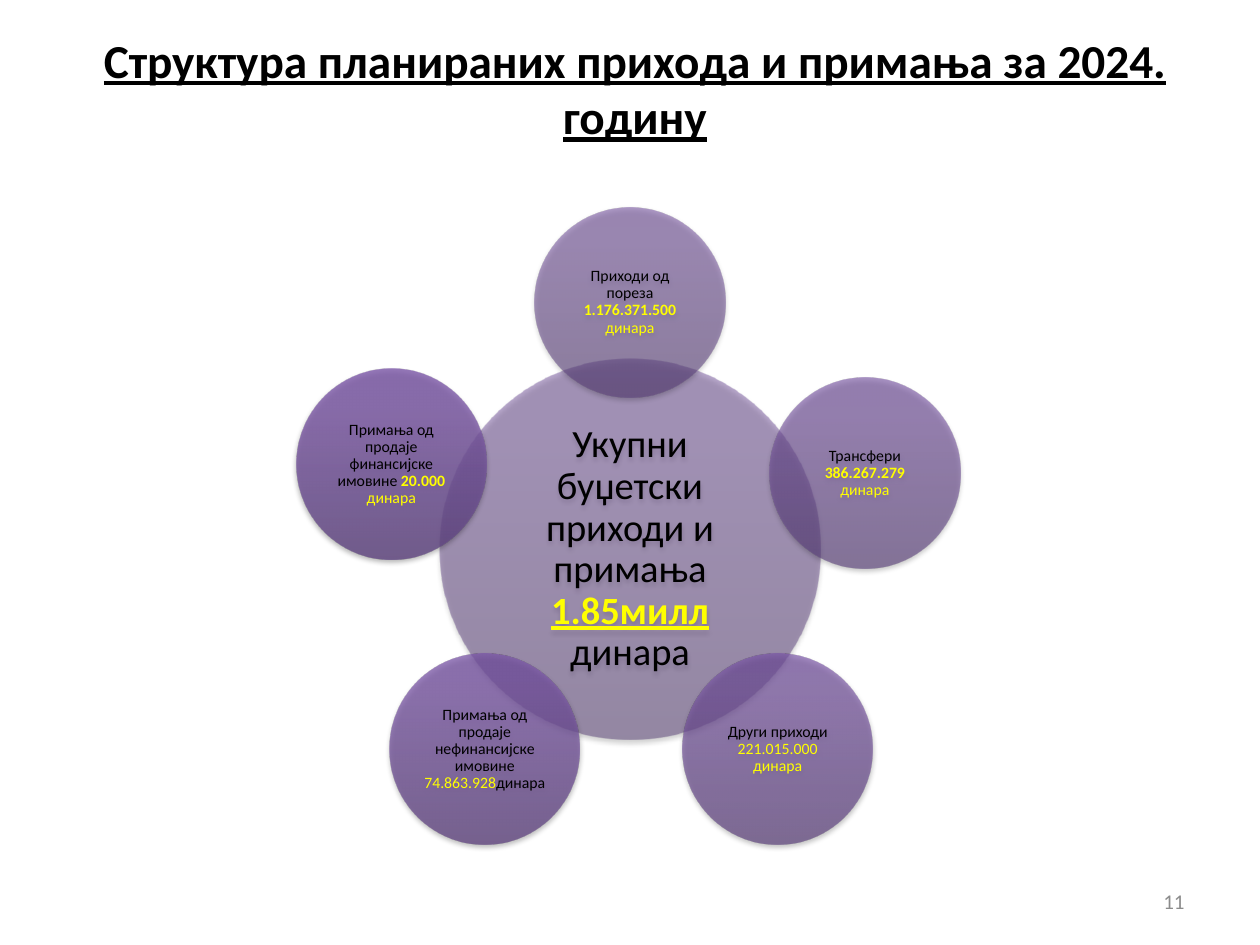
from math import cos, radians, sin

from lxml import etree
from pptx import Presentation
from pptx.dml.color import RGBColor
from pptx.enum.shapes import MSO_SHAPE
from pptx.enum.text import MSO_ANCHOR, MSO_AUTO_SIZE, PP_ALIGN
from pptx.oxml import parse_xml
from pptx.oxml.ns import nsdecls, qn
from pptx.util import Inches, Pt

COLORS = {"black": "000000", "yellow": "FFFF00", "gray": "8C8C8C"}
BLACK, YELLOW = {"color": "black"}, {"color": "yellow"}
YELLOW_BOLD = {"color": "yellow", "bold": True}

TITLE = "Структура планираних прихода и примања за 2024. годину"
PAGE = "11"

# Central circle: runs, gradient from bottom to top, opacity in percent
TOTAL = {
    "runs": [("Укупни буџетски приходи и примања ", BLACK),
             ("1.85милл ", {"color": "yellow", "bold": True, "underline": True}),
             ("динара", BLACK)],
    "grad": ("563D74", "705097", "704F99"), "alpha": 50,
}

# Outer circles, clockwise from the top; nudge shifts one off the ring
PARTS = [
    {"runs": [("Приходи од\vпореза ", BLACK), ("1.176.371.500 ", YELLOW_BOLD),
              ("динара", YELLOW)],
     "grad": ("583E77", "72519A", "73509C"), "alpha": 56, "nudge": (0, 0)},
    {"runs": [("Трансфери ", BLACK), ("386.267.279 ", YELLOW_BOLD), ("динара", YELLOW)],
     "grad": ("5A407A", "75539E", "7551A0"), "alpha": 62, "nudge": (0, 0)},
    {"runs": [("Други приходи ", BLACK), ("221.015.000 динара", YELLOW)],
     "grad": ("5C417C", "7754A1", "7753A4"), "alpha": 68, "nudge": (0.02, 0)},
    {"runs": [("Примања од продаје нефинансијске имовине ", BLACK),
              ("74.863.928", YELLOW), ("динара", BLACK)],
     "grad": ("5E427E", "7956A4", "7A55A6"), "alpha": 74, "nudge": (0, 0)},
    {"runs": [("Примања од продаје финансијске имовине ", BLACK),
              ("20.000 ", YELLOW_BOLD), ("динара", YELLOW)],
     "grad": ("5F4580", "7C59A6", "7C58A8"), "alpha": 80, "nudge": (-0.03, -0.07)},
]

CENTER_X, CENTER_Y, RING = 5, 4.36, 1.96
BIG, SMALL = 3.02, 1.51


def write(tf, runs, size, align=PP_ALIGN.CENTER, spacing=None):
    tf.word_wrap = True
    tf.auto_size = MSO_AUTO_SIZE.NONE
    tf.vertical_anchor = MSO_ANCHOR.MIDDLE
    p = tf.paragraphs[0]
    p.alignment = align
    if spacing:
        p.line_spacing = spacing
    for text, style in runs:
        for i, line in enumerate(text.split("\v")):
            if i:
                p.add_line_break()
            r = p.add_run()
            r.text = line
            formats = {"name": "Calibri", "size": Pt(size), "bold": False, **style}
            r.font.color.rgb = RGBColor.from_string(COLORS[formats.pop("color")])
            for key, value in formats.items():
                setattr(r.font, key, value)


def set_gradient(sp, colors, alpha):
    sp.fill.gradient()
    sp.fill.gradient_angle = 90
    stops = sp.fill._fill._gradFill.find(qn("a:gsLst"))
    for stop in list(stops):
        stops.remove(stop)
    for pos, color in zip((0, 80, 100), colors):
        stops.append(parse_xml(
            f'<a:gs {nsdecls("a")} pos="{pos * 1000}"><a:srgbClr val="{color}">'
            f'<a:alpha val="{alpha * 1000}"/></a:srgbClr></a:gs>'))


def set_shadow(sp):
    sp.shadow.inherit = False
    effects = sp._element.spPr.find(qn("a:effectLst"))
    shadow = etree.SubElement(effects, qn("a:outerShdw"), blurRad=str(Pt(3.1)),
                              dist=str(Pt(1.8)), dir="5400000", rotWithShape="0")
    color = etree.SubElement(shadow, qn("a:srgbClr"), val=COLORS["black"])
    etree.SubElement(color, qn("a:alpha"), val="35000")


def add_circle(s, part, x, y, diameter, size, inset):
    sp = s.shapes.add_shape(MSO_SHAPE.OVAL, Inches(x - diameter / 2),
                            Inches(y - diameter / 2), Inches(diameter), Inches(diameter))
    set_gradient(sp, part["grad"], part["alpha"])
    sp.line.fill.background()
    set_shadow(sp)
    tf = sp.text_frame
    for side in ("left", "top", "right", "bottom"):
        setattr(tf, f"margin_{side}", Inches(inset))
    write(tf, part["runs"], size, spacing=0.9)


prs = Presentation()
prs.slide_width, prs.slide_height = Inches(10), Inches(7.5)
s = prs.slides.add_slide(prs.slide_layouts[5])

# Title
title = s.shapes.title
title.left, title.top, title.width, title.height = map(Inches, (0.54, 0.27, 9, 0.85))
write(title.text_frame, [(TITLE, {"color": "black", "bold": True, "underline": True})], 27)

# Page number
page = s.shapes.add_textbox(*map(Inches, (7.17, 6.95, 2.33, 0.4)))
write(page.text_frame, [(PAGE, {"color": "gray"})], 12, PP_ALIGN.RIGHT)

# Central circle and the ring around it
add_circle(s, TOTAL, CENTER_X, CENTER_Y, BIG, 22, 0.03)
for i, part in enumerate(PARTS):
    angle = radians(i * 360 / len(PARTS))
    dx, dy = part["nudge"]
    add_circle(s, part, CENTER_X + RING * sin(angle) + dx,
               CENTER_Y - RING * cos(angle) + dy, SMALL, 9, 0.01)

prs.save("out.pptx")
